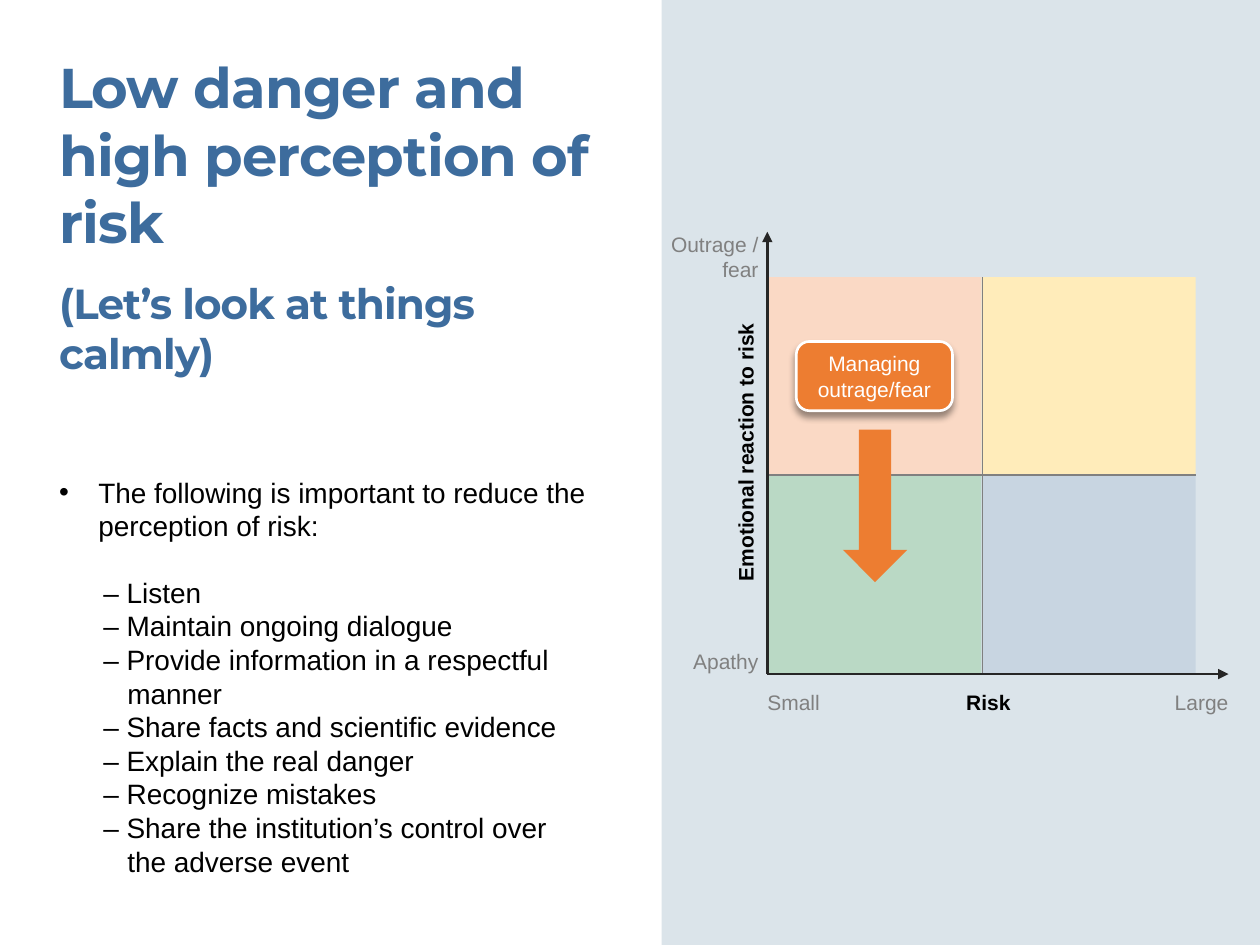
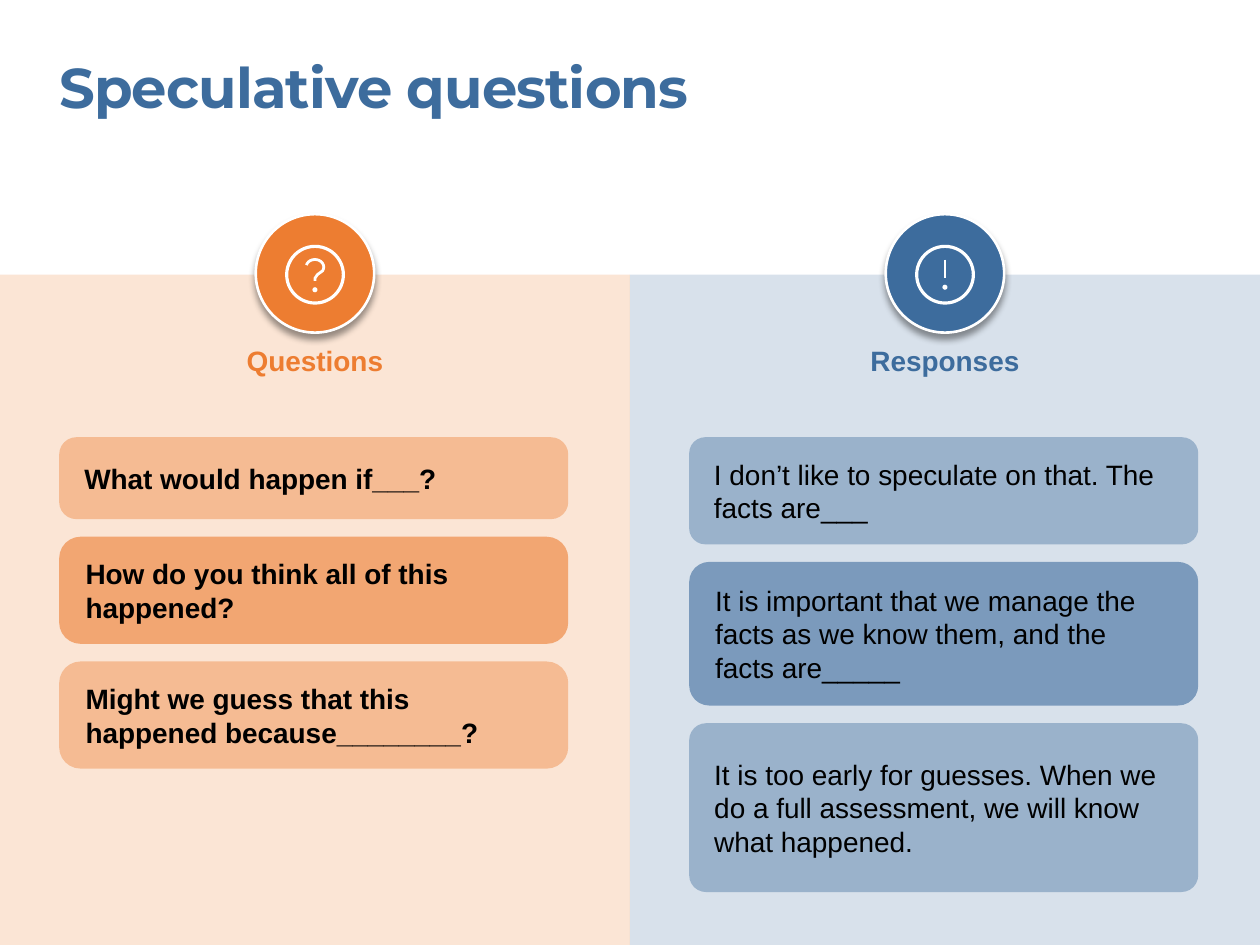
from dataclasses import dataclass
from math import cos, radians, sin

from lxml.etree import SubElement
from pptx import Presentation
from pptx.dml.color import RGBColor
from pptx.enum.shapes import MSO_CONNECTOR as Connector, MSO_SHAPE as Shape
from pptx.enum.text import MSO_ANCHOR as Anchor, MSO_AUTO_SIZE as AutoSize, PP_ALIGN as Align
from pptx.oxml.ns import qn
from pptx.util import Inches, Pt

# Shared look
BLUE, ORANGE = "3D6C9D", "ED7D31"
WHITE, BLACK, GREY, DARK = "FFFFFF", "000000", "808080", "262626"
HEAD_FONT, TEXT_FONT = "Montserrat", "Arial"
LEFT, TOP = 0.47, 0.42


@dataclass(frozen=True)
class Box:
    x: float
    y: float
    w: float
    h: float


@dataclass(frozen=True)
class Style:
    size: float
    color: str = BLACK
    bold: bool = False
    font: str = TEXT_FONT
    spacing: int = 0


@dataclass(frozen=True)
class Label:
    text: str
    box: Box
    style: Style
    align: Align
    turn: float = 0


@dataclass(frozen=True)
class Card:
    text: str
    height: float
    alpha: int
    corner: float


@dataclass(frozen=True)
class Column:
    heading: str
    x: float
    color: str
    bold: bool
    cards: tuple[Card, ...]


TITLE = Style(32, BLUE, True, HEAD_FONT, -50)
SUBTITLE = Style(24, BLUE, True, HEAD_FONT, -50)
BODY = Style(16)
AXIS_END, AXIS_NAME = Style(12, GREY), Style(12, BLACK, True)


# Drawing functions
def rgb(color: str) -> RGBColor:
    return RGBColor.from_string(color)


def place(shape, box: Box) -> None:
    shape.left, shape.top = Inches(box.x), Inches(box.y)
    shape.width, shape.height = Inches(box.w), Inches(box.h)


def add_span(para, text: str, style: Style) -> None:
    span = para.add_run()
    span.text = text
    font = span.font
    font.size, font.bold, font.name = Pt(style.size), style.bold, style.font
    font.color.rgb = rgb(style.color)
    if style.spacing:
        span._r.get_or_add_rPr().set("spc", str(style.spacing))


def set_frame(frame, anchor=Anchor.TOP, inset_x: float = 0, inset_y: float = 0) -> None:
    frame.word_wrap = True
    frame.auto_size = AutoSize.NONE
    frame.vertical_anchor = anchor
    frame.margin_left = frame.margin_right = Inches(inset_x)
    frame.margin_top = frame.margin_bottom = Inches(inset_y)


def write(frame, text: str, style: Style, align=Align.LEFT) -> None:
    para = frame.paragraphs[0]
    para.alignment = align
    add_span(para, text, style)


def set_title(page, text: str, box: Box) -> None:
    title = page.shapes.title
    place(title, box)
    set_frame(title.text_frame)
    write(title.text_frame, text, TITLE)


def add_label(page, label: Label) -> None:
    box = label.box
    text_box = page.shapes.add_textbox(Inches(box.x), Inches(box.y), Inches(box.w), Inches(box.h))
    text_box.rotation = label.turn
    set_frame(text_box.text_frame)
    write(text_box.text_frame, label.text, label.style, label.align)


def add_block(page, kind, box: Box, fill: str | None, alpha: int = 100,
              line: str | None = None, width: float = 1.5):
    block = page.shapes.add_shape(kind, Inches(box.x), Inches(box.y), Inches(box.w), Inches(box.h))
    block.shadow.inherit = False
    if fill:
        block.fill.solid()
        block.fill.fore_color.rgb = rgb(fill)
        if alpha < 100:
            color = block._element.spPr.find(qn("a:solidFill"))[0]
            SubElement(color, qn("a:alpha"), val=str(alpha * 1000))
    else:
        block.fill.background()
    if line:
        block.line.color.rgb = rgb(line)
        block.line.width = Pt(width)
    else:
        block.line.fill.background()
    return block


def add_drop_shadow(shape) -> None:
    effects = shape._element.spPr.find(qn("a:effectLst"))
    shadow = SubElement(effects, qn("a:outerShdw"), blurRad=str(Pt(4)), dist=str(Pt(3)),
                        dir="5400000", algn="t", rotWithShape="0")
    color = SubElement(shadow, qn("a:srgbClr"), val=BLACK)
    SubElement(color, qn("a:alpha"), val="40000")


def add_line(page, start: tuple[float, float], end: tuple[float, float],
             color: str, width: float, arrow: bool = False) -> None:
    line = page.shapes.add_connector(Connector.STRAIGHT, Inches(start[0]), Inches(start[1]),
                                     Inches(end[0]), Inches(end[1]))
    line.line.color.rgb = rgb(color)
    line.line.width = Pt(width)
    if arrow:
        SubElement(line.line._get_or_add_ln(), qn("a:tailEnd"), type="triangle")
    SubElement(line._element.spPr, qn("a:effectLst"))


def add_list_item(para, text: str, margin: float, hanging: float, bullet: str = "") -> None:
    props = para._p.get_or_add_pPr()
    props.set("marL", str(Inches(margin)))
    props.set("indent", str(Inches(-hanging)))
    para.space_before = Pt(0)
    if bullet:
        SubElement(props, qn("a:buFont"), typeface=TEXT_FONT)
        SubElement(props, qn("a:buChar"), char=bullet)
    else:
        SubElement(props, qn("a:buNone"))
    add_span(para, text, BODY)


# Slide 1: advice beside the risk matrix
ADVICE = (
    "Listen",
    "Maintain ongoing dialogue",
    "Provide information in a respectful manner",
    "Share facts and scientific evidence",
    "Explain the real danger",
    "Recognize mistakes",
    "Share the institution’s control over the adverse event",
)
MATRIX = (("FAD9C5", "FFECBA"), ("BAD9C5", "C8D5E1"))
MATRIX_X, MATRIX_Y, CELL_W, CELL_H = 6.09, 2.2, 1.7, 1.57
AXIS_Y, AXIS_TOP, AXIS_RIGHT = 5.35, 1.84, 9.75
LABELS = (
    Label("(Let’s look at things calmly)", Box(LEFT, 2.2, 4.53, 0.81), SUBTITLE, Align.LEFT),
    Label("Small", Box(MATRIX_X, 5.47, 0.72, 0.2), AXIS_END, Align.LEFT),
    Label("Large", Box(9.11, 5.47, 0.64, 0.2), AXIS_END, Align.RIGHT),
    Label("Risk", Box(7.38, 5.47, 0.93, 0.2), AXIS_NAME, Align.CENTER),
    Label("Emotional reaction to risk", Box(4.16, 3.49, 3.51, 0.2), AXIS_NAME, Align.CENTER, 270),
    Label("Outrage / fear", Box(5.13, AXIS_TOP, 0.89, 0.4), AXIS_END, Align.RIGHT),
    Label("Apathy", Box(5.13, 5.15, 0.89, 0.2), AXIS_END, Align.RIGHT),
)


def add_risk_page(deck) -> None:
    page = deck.slides.add_slide(deck.slide_layouts[1])
    set_title(page, "Low danger and high perception of risk", Box(LEFT, TOP, 4.22, 1.62))
    add_block(page, Shape.RECTANGLE, Box(5.25, 0, 4.75, 7.5), "DBE4EA")

    # Advice list
    body = page.placeholders[1]
    place(body, Box(LEFT, 3.77, 4.22, 3.23))
    frame = body.text_frame
    set_frame(frame)
    lead = frame.paragraphs[0]
    add_list_item(lead, "The following is important to reduce the perception of risk:", 0.31, 0.31, "•")
    lead.space_after = Pt(19)
    for item in ADVICE:
        add_list_item(frame.add_paragraph(), f"– {item}", 0.54, 0.19)

    # Matrix and axes
    for row, colors in enumerate(MATRIX):
        for col, color in enumerate(colors):
            cell = Box(MATRIX_X + col * CELL_W, MATRIX_Y + row * CELL_H, CELL_W, CELL_H)
            add_block(page, Shape.RECTANGLE, cell, color)
    middle_y = MATRIX_Y + CELL_H
    add_line(page, (7.8, AXIS_Y), (7.8, MATRIX_Y), GREY, 0.75)
    add_line(page, (MATRIX_X, middle_y), (MATRIX_X + 2 * CELL_W, middle_y), GREY, 0.75)
    for tip in ((MATRIX_X, AXIS_TOP), (AXIS_RIGHT, AXIS_Y)):
        add_line(page, (MATRIX_X, AXIS_Y), tip, DARK, 1.5, arrow=True)

    # Strategy callout
    callout = add_block(page, Shape.ROUNDED_RECTANGLE, Box(6.32, 2.71, 1.24, 0.55), ORANGE, line=WHITE)
    callout.adjustments[0] = 0.19
    add_drop_shadow(callout)
    set_frame(callout.text_frame, Anchor.MIDDLE, 0.1, 0.05)
    write(callout.text_frame, "Managing outrage/fear", Style(12, WHITE), Align.CENTER)
    add_block(page, Shape.DOWN_ARROW, Box(6.69, 3.41, 0.51, 1.21), ORANGE)
    for label in LABELS:
        add_label(page, label)


# Slide 2: questions and responses
BAND_Y, BAND_W, BAND_H = 2.18, 5, 5.32
CARD_Y, CARD_W, CARD_GAP = 3.47, 4.04, 0.14
BADGE_SIZE, RING_SIZE, DOT_SIZE = 0.94, 0.45, 0.04
QUESTIONS = Column("Questions", 0, ORANGE, True, (
    Card("What would happen if___?", 0.65, 40, 0.21),
    Card("How do you think all of this happened?", 0.85, 60, 0.2),
    Card("Might we guess that this happened because________?", 0.85, 40, 0.2),
))
RESPONSES = Column("Responses", BAND_W, BLUE, False, (
    Card("I don’t like to speculate on that. The facts are___", 0.85, 40, 0.15),
    Card("It is important that we manage the facts as we know them, and the facts are_____", 1.14, 60, 0.14),
    Card("It is too early for guesses. When we do a full assessment, we will know what happened.",
         1.34, 40, 0.1),
))


def centered(x: float, y: float, size: float) -> Box:
    return Box(x - size / 2, y - size / 2, size, size)


def add_question_mark(page, x: float) -> None:
    hook = [(x + 0.07 * cos(radians(turn)), 2.12 - 0.06 * sin(radians(turn)))
            for turn in range(165, -31, -15)]
    points = [(Inches(px), Inches(py)) for px, py in hook + [(x + 0.02, 2.18), (x, 2.21), (x, 2.23)]]
    builder = page.shapes.build_freeform(*points[0])
    builder.add_line_segments(points[1:], close=False)
    mark = builder.convert_to_shape()
    mark.shadow.inherit = False
    mark.fill.background()
    mark.line.color.rgb = rgb(WHITE)
    mark.line.width = Pt(1.6)


def add_badge(page, column: Column) -> None:
    x = column.x + BAND_W / 2
    badge = add_block(page, Shape.OVAL, centered(x, 2.17, BADGE_SIZE), column.color, line=WHITE)
    add_drop_shadow(badge)
    add_block(page, Shape.OVAL, centered(x, BAND_Y, RING_SIZE), None, line=WHITE, width=1.8)
    if column is QUESTIONS:
        add_question_mark(page, x)
    else:
        add_line(page, (x, 2.06), (x, 2.21), WHITE, 1.6)
    add_block(page, Shape.OVAL, centered(x, 2.3 if column is QUESTIONS else 2.28, DOT_SIZE), WHITE)


def add_column(page, column: Column) -> None:
    add_block(page, Shape.RECTANGLE, Box(column.x, BAND_Y, BAND_W, BAND_H), column.color, 20)
    add_badge(page, column)
    heading = Style(16, column.color, True)
    add_label(page, Label(column.heading, Box(column.x, 2.73, BAND_W, 0.27), heading, Align.CENTER))
    y = CARD_Y
    for card in column.cards:
        block = add_block(page, Shape.ROUNDED_RECTANGLE, Box(column.x + LEFT, y, CARD_W, card.height),
                          column.color, card.alpha)
        block.adjustments[0] = card.corner
        set_frame(block.text_frame, Anchor.MIDDLE, 0.16, 0.08)
        write(block.text_frame, card.text, Style(16, bold=column.bold))
        y += card.height + CARD_GAP


def add_questions_page(deck) -> None:
    page = deck.slides.add_slide(deck.slide_layouts[5])
    set_title(page, "Speculative questions", Box(LEFT, TOP, 9.02, 0.54))
    for column in (QUESTIONS, RESPONSES):
        add_column(page, column)


def main() -> None:
    deck = Presentation()
    deck.slide_width, deck.slide_height = Inches(10), Inches(7.5)
    add_risk_page(deck)
    add_questions_page(deck)
    deck.save("out.pptx")


if __name__ == "__main__":
    main()
